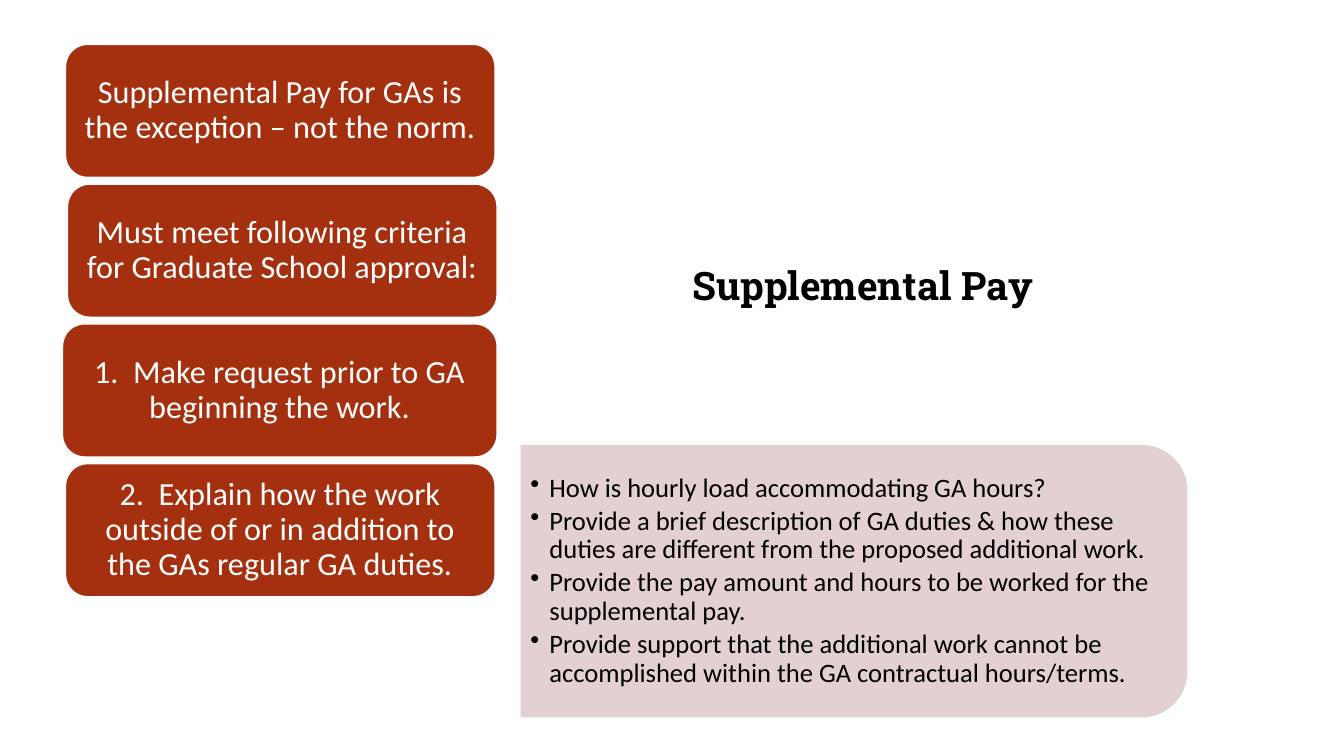
from dataclasses import dataclass

from lxml import etree
from pptx import Presentation
from pptx import util as u
from pptx.dml.color import RGBColor
from pptx.enum import shapes, text
from pptx.oxml import ns


@dataclass(frozen=True)
class Theme:
    rust: str = "A5300F"
    rose: str = "E1CDCC"
    white: str = "FFFFFF"
    black: str = "000000"
    head: str = "Roboto Slab"
    body: str = "Calibri"
    big: int = 28
    mid: int = 23
    small: int = 19


def write(frame, lines, size, color, font, bold=False, align=text.PP_ALIGN.LEFT,
          anchor=text.MSO_ANCHOR.MIDDLE, inset=(0.1, 0.05), after=0, hang=0):
    """Fill a text frame, one paragraph a line; hang sets a bullet indent."""
    frame.word_wrap = True
    frame.vertical_anchor = anchor
    frame.margin_left = frame.margin_right = u.Inches(inset[0])
    frame.margin_top = frame.margin_bottom = u.Inches(inset[1])
    for i, line in enumerate(lines):
        para = frame.add_paragraph() if i else frame.paragraphs[0]
        para.alignment = align
        para.line_spacing = 0.9
        para.space_after = u.Pt(after)
        run = para.add_run()
        run.text = line
        run.font.name = font
        run.font.size = u.Pt(size)
        run.font.bold = bold
        run.font.color.rgb = RGBColor.from_string(color)
        if hang:
            props = para._p.get_or_add_pPr()
            props.set("marL", str(u.Inches(hang)))
            props.set("indent", str(-u.Inches(hang)))
            etree.SubElement(props, ns.qn("a:buChar")).set("char", "•")


class Deck:
    def __init__(self, theme):
        self.theme = theme
        self.file = Presentation()
        self.file.slide_width = u.Inches(13.33)
        self.file.slide_height = u.Inches(7.5)
        self.slide = self.file.slides.add_slide(self.file.slide_layouts[6])

    def shape(self, kind, spot, fill, line, alpha=None):
        item = self.slide.shapes.add_shape(kind, *map(u.Inches, spot))
        item.shadow.inherit = False
        item.fill.solid()
        item.fill.fore_color.rgb = RGBColor.from_string(fill)
        item.line.color.rgb = RGBColor.from_string(line)
        item.line.width = u.Pt(1)
        if alpha:
            for tint in item._element.spPr.iter(ns.qn("a:srgbClr")):
                etree.SubElement(tint, ns.qn("a:alpha")).set("val", str(alpha * 1000))
        return item

    def label(self, spot, lines, **style):
        box = self.slide.shapes.add_textbox(*map(u.Inches, spot))
        write(box.text_frame, lines, **style)

    def card(self, spot, line):
        t = self.theme
        item = self.shape(shapes.MSO_SHAPE.ROUNDED_RECTANGLE, spot, t.rust, t.white)
        write(item.text_frame, [line], size=t.mid, color=t.white, font=t.body,
              align=text.PP_ALIGN.CENTER)

    def panel(self, spot, lines):
        t = self.theme
        # Turned a quarter so that the rounded corners face right
        x, y, wide, high = spot
        turned = (x + (wide - high) / 2, y + (high - wide) / 2, high, wide)
        item = self.shape(shapes.MSO_SHAPE.ROUND_2_SAME_RECTANGLE, turned,
                          t.rose, t.rose, alpha=90)
        item.rotation = 90
        self.label((x + 0.01, y + 0.13, wide - 0.13, high - 0.26), lines,
                   size=t.small, color=t.black, font=t.body,
                   inset=(0.08, 0.04), after=3, hang=0.19)


# Left and width of each card, with its text
CARDS = [
    (0.65, 4.26, "Supplemental Pay for GAs is the exception – not the norm."),
    (0.67, 4.26, "Must meet following criteria for Graduate School approval:"),
    (0.62, 4.31, "1.  Make request prior to GA beginning the work."),
    (0.65, 4.26, "2.  Explain how the work outside of or in addition to "
                 "the GAs regular GA duties."),
]
FIRST, LAST, HIGH = 0.44, 4.6, 1.32
POINTS = [
    "How is hourly load accommodating GA hours?",
    "Provide a brief description of GA duties & how these duties are different "
    "from the proposed additional work.",
    "Provide the pay amount and hours to be worked for the supplemental pay.",
    "Provide support that the additional work cannot be accomplished within "
    "the GA contractual hours/terms.",
]


def main():
    t = Theme()
    deck = Deck(t)

    # Title
    deck.label((6.77, 0.86, 6.18, 2.25), ["Supplemental Pay"], size=t.big,
               color=t.black, font=t.head, bold=True,
               anchor=text.MSO_ANCHOR.BOTTOM)

    # Column of cards
    step = (LAST - FIRST) / (len(CARDS) - 1)
    for i, (left, wide, line) in enumerate(CARDS):
        deck.card((left, FIRST + i * step, wide, HIGH), line)

    # Details of the last card
    deck.panel((5.17, 4.42, 6.6, 2.69), POINTS)

    deck.file.save("out.pptx")


if __name__ == "__main__":
    main()
